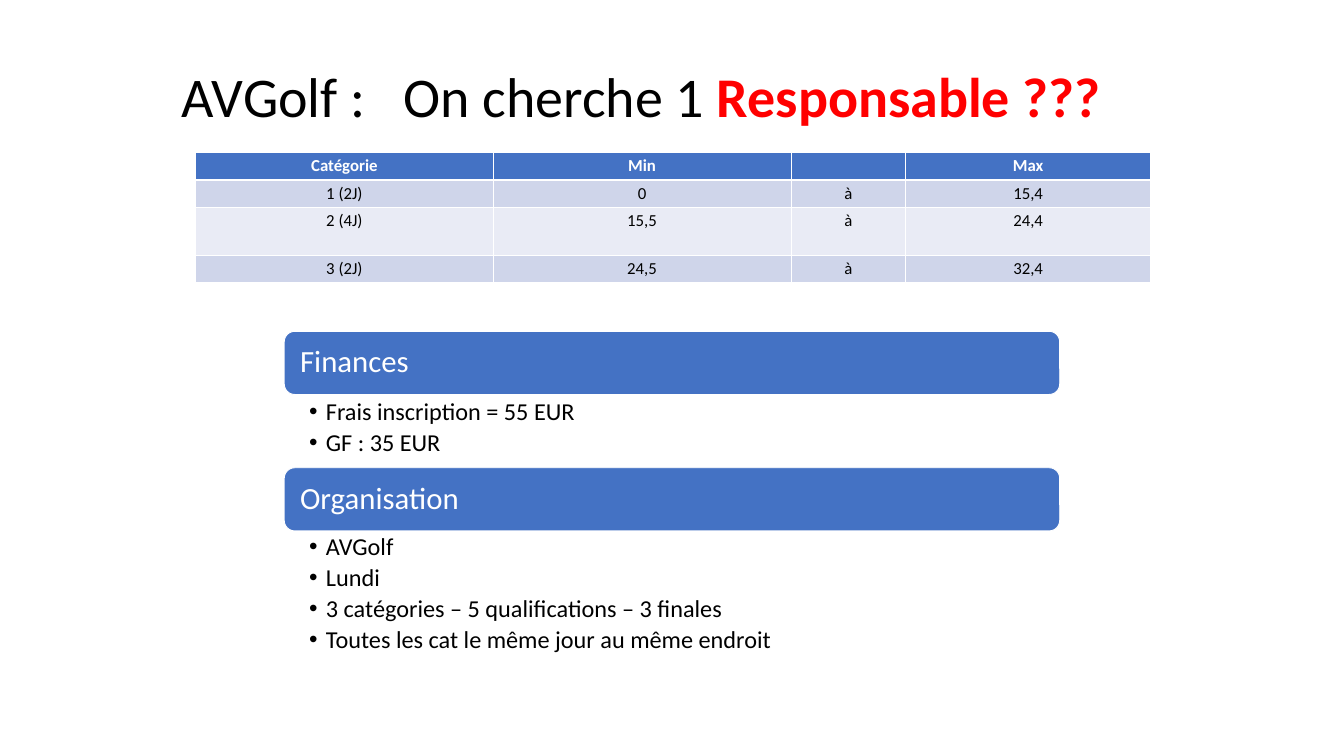
from dataclasses import dataclass

from lxml.etree import SubElement
from pptx import Presentation
from pptx.dml.color import RGBColor
from pptx.enum.shapes import MSO_SHAPE
from pptx.enum.text import MSO_ANCHOR, PP_ALIGN
from pptx.oxml.ns import qn
from pptx.util import Inches, Pt


@dataclass(frozen=True)
class Theme:
    font: str = "Calibri"
    ink: str = "000000"
    paper: str = "FFFFFF"
    alert: str = "FF0000"
    blue: str = "4472C4"
    bands: tuple = ("CFD5EA", "E9EBF5")
    title: float = 60
    head: float = 33
    item: float = 26
    cell: float = 18


THEME = Theme()
WIDTH, HEIGHT = 20, 11.25
LEFT, SPAN = 21.15, 57.7
BAR = 8.36


def across(share):
    return Inches(WIDTH * share / 100)


def down(share):
    return Inches(HEIGHT * share / 100)


def place(left, top, width, height):
    return across(left), down(top), across(width), down(height)


def add_run(para, text, size, color=THEME.ink, bold=False, track=0):
    run = para.add_run()
    run.text = text
    font = run.font
    font.name, font.size, font.bold = THEME.font, Pt(size), bold
    font.color.rgb = RGBColor.from_string(color)
    if track:
        font._element.set("spc", str(track * 100))


def paint(target, color):
    target.fill.solid()
    target.fill.fore_color.rgb = RGBColor.from_string(color)


def add_edge(cell, side, width):
    props = cell._tc.get_or_add_tcPr()
    edge = SubElement(props, qn(f"a:ln{side}"), w=str(Pt(width)))
    fill = SubElement(edge, qn("a:solidFill"))
    SubElement(fill, qn("a:srgbClr"), val=THEME.paper)


def add_title(slide):
    frame = slide.shapes.add_textbox(*place(9.8, 7.64, 75.85, 12.53)).text_frame
    frame.word_wrap = True
    para = frame.paragraphs[0]
    para.alignment = PP_ALIGN.CENTER
    add_run(para, "AVGolf :", THEME.title)
    add_run(para, " ", THEME.title, track=27)
    add_run(para, "On cherche 1 ", THEME.title)
    add_run(para, "Responsable ???", THEME.title, THEME.alert, True)


def fill_cell(cell, text, row):
    header = row == 0
    for side in "LRTB":
        thick = (header and side == "B") or (row == 1 and side == "T")
        add_edge(cell, side, 3 if thick else 1)
    paint(cell, THEME.blue if header else THEME.bands[(row - 1) % 2])
    para = cell.text_frame.paragraphs[0]
    para.alignment = PP_ALIGN.CENTER
    para.font.size = Pt(THEME.cell)
    if text:
        add_run(para, text, THEME.cell, THEME.paper if header else THEME.ink, header)


def add_grid(slide, rows, widths, heights):
    box = place(14.55, 20.18, sum(widths), sum(heights))
    table = slide.shapes.add_table(len(rows), len(widths), *box).table
    for column, width in zip(table.columns, widths):
        column.width = across(width)
    for line, height in zip(table.rows, heights):
        line.height = down(height)
    for row, texts in enumerate(rows):
        for column, text in enumerate(texts):
            fill_cell(table.cell(row, column), text, row)


def add_bar(slide, top, text):
    bar = slide.shapes.add_shape(
        MSO_SHAPE.ROUNDED_RECTANGLE, *place(LEFT, top, SPAN, BAR)
    )
    bar.shadow.inherit = False
    paint(bar, THEME.blue)
    bar.line.color.rgb = RGBColor.from_string(THEME.paper)
    bar.line.width = Pt(1)
    frame = bar.text_frame
    frame.word_wrap = True
    frame.vertical_anchor = MSO_ANCHOR.MIDDLE
    frame.margin_left = frame.margin_right = across(0.95)
    para = frame.paragraphs[0]
    para.alignment = PP_ALIGN.LEFT
    para.line_spacing = 0.9
    add_run(para, text, THEME.head, THEME.paper)


def add_list(slide, top, height, items):
    frame = slide.shapes.add_textbox(*place(LEFT, top, SPAN, height)).text_frame
    frame.word_wrap = True
    frame.margin_left, frame.margin_right = across(1.85), across(1.3)
    for index, text in enumerate(items):
        para = frame.add_paragraph() if index else frame.paragraphs[0]
        para.level = 1
        para.line_spacing = 0.9
        para.space_after = Pt(THEME.item * 0.2)
        props = para._p.get_or_add_pPr()
        props.set("marL", str(across(1.25)))
        props.set("indent", str(-across(1.25)))
        SubElement(props, qn("a:buFont"), typeface="Arial")
        SubElement(props, qn("a:buChar"), char="•")
        add_run(para, text, THEME.item)


def main():
    deck = Presentation()
    deck.slide_width, deck.slide_height = Inches(WIDTH), Inches(HEIGHT)
    slide = deck.slides.add_slide(deck.slide_layouts[6])
    add_title(slide)
    rows = [
        ("Catégorie", "Min", "", "Max"),
        ("1 (2J)", "0", "à", "15,4"),
        ("2 (4J)", "15,5", "à", "24,4"),
        ("3 (2J)", "24,5", "à", "32,4"),
    ]
    add_grid(slide, rows, (22.15, 22.15, 8.55, 18.2), (3.6, 3.6, 6.35, 3.6))
    panels = [
        (43.82, 52.44, 9.42, "Finances", ("Frais inscription = 55 EUR", "GF : 35 EUR")),
        (61.87, 70.22, 22.13, "Organisation", (
            "AVGolf",
            "Lundi",
            "3 catégories – 5 qualifications – 3 finales",
            "Toutes les cat le même jour au même endroit",
        )),
    ]
    for top, start, height, head, items in panels:
        add_bar(slide, top, head)
        add_list(slide, start, height, items)
    deck.save("out.pptx")


if __name__ == "__main__":
    main()
